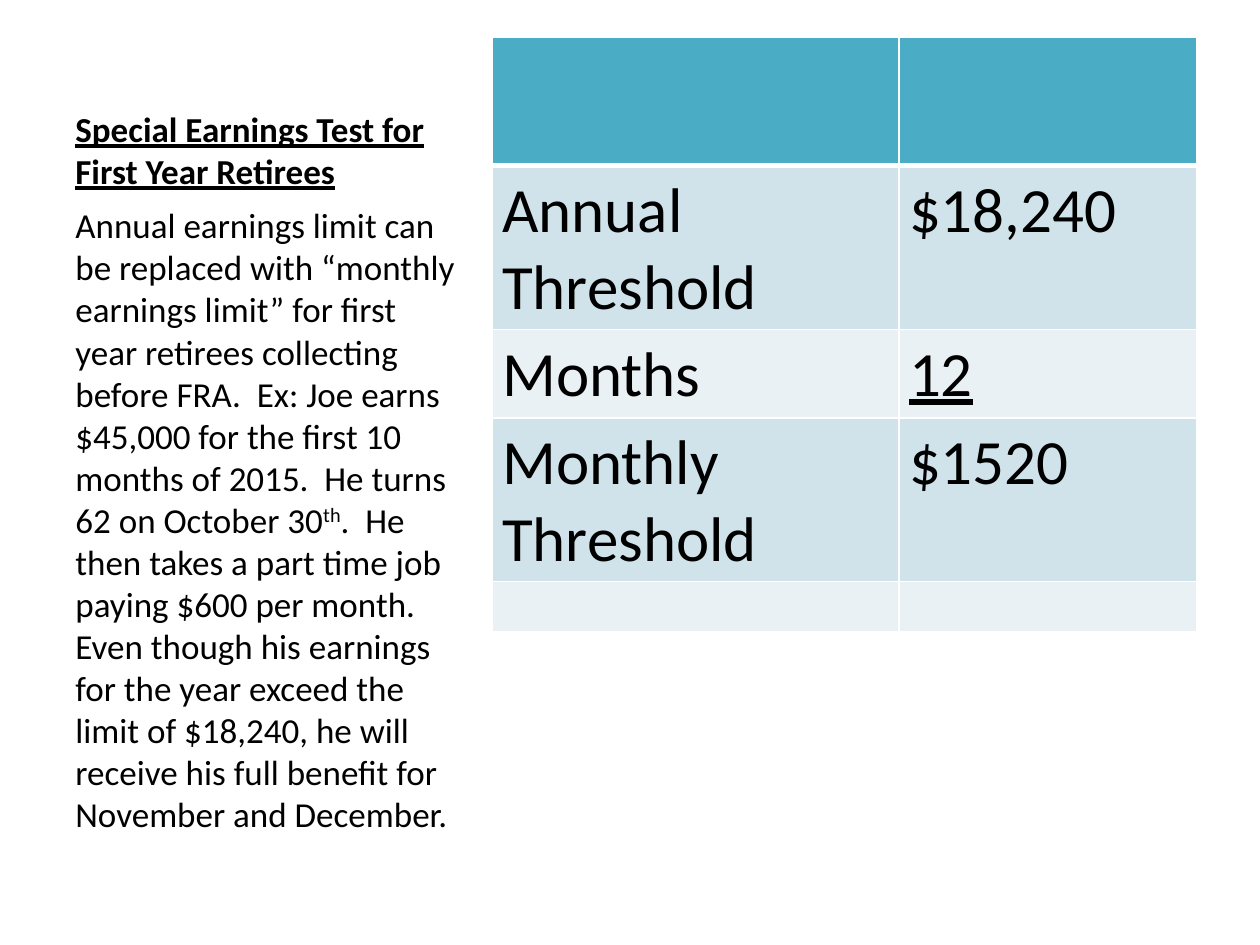
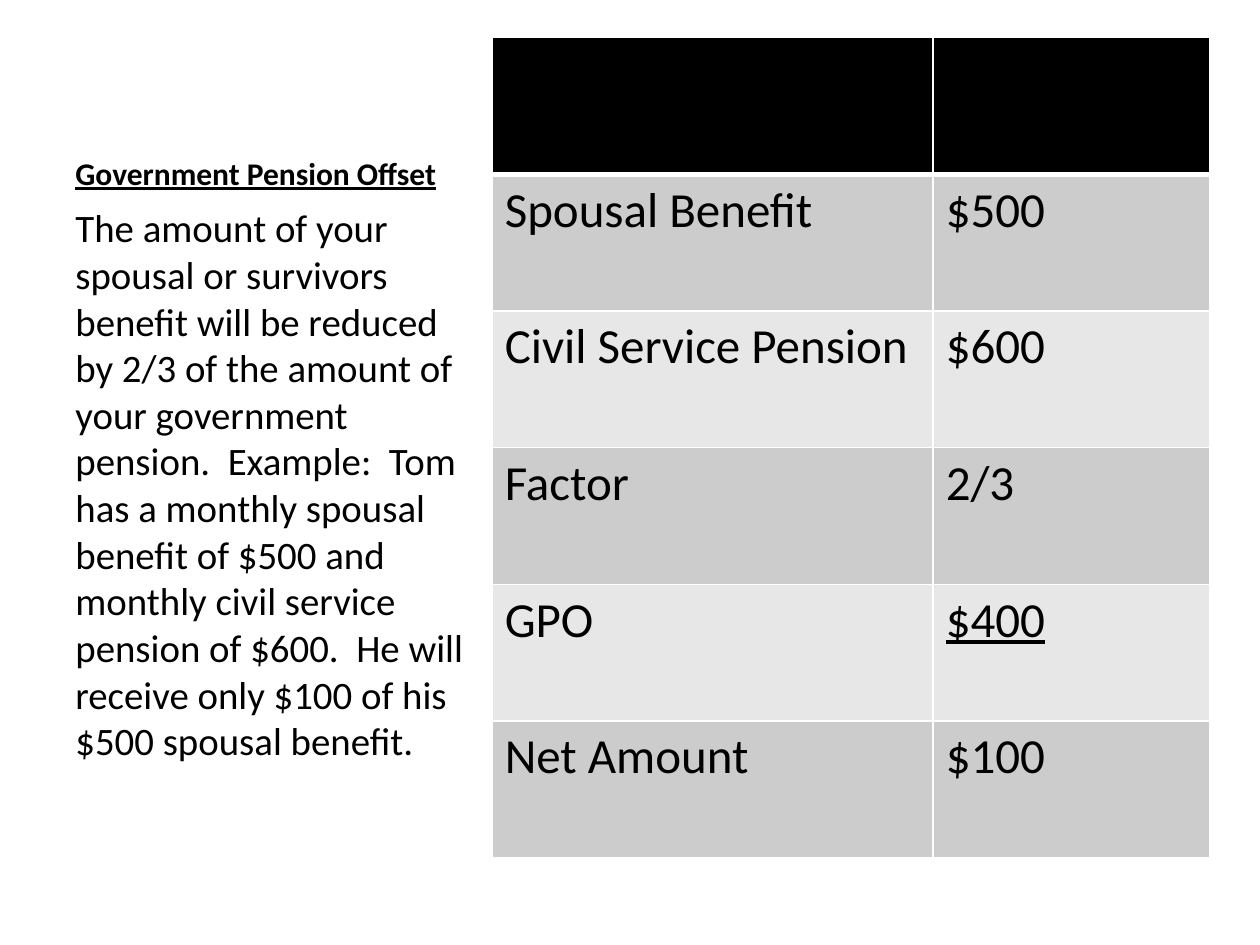
from pptx import Presentation
from pptx.dml.color import RGBColor
from pptx.enum.text import MSO_ANCHOR
from pptx.oxml import parse_xml
from pptx.oxml.ns import nsdecls
from pptx.util import Pt

FONT = "Calibri"
BLACK = "000000"
WHITE = "FFFFFF"
TEAL_BANDS = ("4BACC6", "D0E3EA", "E9F1F5")
GREY_BANDS = (BLACK, "CCCCCC", "E7E7E7")
COLUMN_LEFT, COLUMN_WIDTH = 36, 237
TITLE_TOP, TITLE_HEIGHT = 21.5, 91.5
BODY_TOP, BODY_HEIGHT = 113, 369.5
TABLE_LEFT = 281.25


def color(value):
    return RGBColor.from_string(value)


class Deck:
    def __init__(self):
        self.presentation = Presentation()
        self.presentation.slide_width = Pt(720)
        self.presentation.slide_height = Pt(540)
        self.slide = None

    def new_slide(self):
        self.slide = self.presentation.slides.add_slide(self.presentation.slide_layouts[6])

    def add_run(self, paragraph, text, size, bold=False, underline=False, baseline=0):
        run = paragraph.add_run()
        run.text = text
        run.font.name = FONT
        run.font.size = Pt(size)
        run.font.bold = bold
        run.font.underline = underline
        run.font.color.rgb = color(BLACK)
        if baseline:
            run._r.get_or_add_rPr().set("baseline", str(baseline * 1000))

    def add_text(self, top, height, anchor):
        shape = self.slide.shapes.add_textbox(
            Pt(COLUMN_LEFT), Pt(top), Pt(COLUMN_WIDTH), Pt(height))
        shape.text_frame.word_wrap = True
        shape.text_frame.vertical_anchor = anchor
        return shape.text_frame.paragraphs[0]

    def add_title(self, text, size):
        paragraph = self.add_text(TITLE_TOP, TITLE_HEIGHT, MSO_ANCHOR.BOTTOM)
        self.add_run(paragraph, text, size, bold=True, underline=True)

    def add_body(self, runs, size):
        paragraph = self.add_text(BODY_TOP, BODY_HEIGHT, MSO_ANCHOR.TOP)
        paragraph.space_before = Pt(size * 0.2)
        for text, baseline in runs:
            self.add_run(paragraph, text, size, baseline=baseline)

    def style_cell(self, cell, row_index, bands):
        properties = cell._tc.get_or_add_tcPr()
        widths = {"L": 1, "R": 1, "T": 3 if row_index == 1 else 1, "B": 3 if row_index == 0 else 1}
        for side, width in widths.items():
            properties.append(parse_xml(
                f'<a:ln{side} {nsdecls("a")} w="{Pt(width)}"><a:solidFill>'
                f'<a:srgbClr val="{WHITE}"/></a:solidFill></a:ln{side}>'))
        cell.fill.solid()
        band = 0 if row_index == 0 else 2 - row_index % 2
        cell.fill.fore_color.rgb = color(bands[band])

    def add_table(self, rows, widths, heights, size, bands, underlined, margin=7.2):
        table = self.slide.shapes.add_table(
            len(rows), len(widths), Pt(TABLE_LEFT), Pt(TITLE_TOP),
            Pt(sum(widths)), Pt(sum(heights))).table
        table.first_row = False
        table.horz_banding = False
        for column, width in zip(table.columns, widths):
            column.width = Pt(width)
        for row_index, (values, height) in enumerate(zip(rows, heights)):
            table.rows[row_index].height = Pt(height)
            for column_index, text in enumerate(values):
                cell = table.cell(row_index, column_index)
                cell.margin_left = cell.margin_right = Pt(margin)
                self.style_cell(cell, row_index, bands)
                if text:
                    self.add_run(cell.text_frame.paragraphs[0], text, size,
                                 underline=text == underlined)


def add_earnings_test(deck):
    deck.new_slide()
    deck.add_title("Special Earnings Test for First Year Retirees", 20)
    deck.add_table(
        [("", ""), ("Annual Threshold", "$18,240"), ("Months", "12"),
         ("Monthly Threshold", "$1520"), ("", "")],
        widths=(232.5, 170), heights=(73.25, 92.25, 49.75, 49.75, 28.75),
        size=36, bands=TEAL_BANDS, underlined="12", margin=5.75)
    deck.add_body([
        ("Annual earnings limit can be replaced with “monthly earnings limit” for first year "
         "retirees collecting before FRA.  Ex: Joe earns $45,000 for the first 10 months of "
         "2015.  He turns 62 on October 30", 0),
        ("th", 30),
        (".  He then takes a part time job paying $600 per month.  Even though his earnings "
         "for the year exceed the limit of $18,240, he will receive his full benefit for "
         "November and December.", 0)], 20)


def add_pension_offset(deck):
    deck.new_slide()
    deck.add_title("Government Pension Offset", 18)
    rows = [("", ""), ("Spousal Benefit", "$500"), ("Civil Service Pension", "$600"),
            ("Factor", "2/3"), ("GPO", "$400"), ("Net Amount", "$100")]
    deck.add_table(rows, widths=(252, 158.25), heights=[78.1] * len(rows),
                   size=28, bands=GREY_BANDS, underlined="$400")
    deck.add_body([
        ("The amount of your spousal or survivors benefit will be reduced by 2/3 of the amount "
         "of your government pension.  Example:  Tom has a monthly spousal benefit of $500 and "
         "monthly civil service pension of $600.  He will receive only $100 of his $500 "
         "spousal benefit.", 0)], 22.2)


def main():
    deck = Deck()
    add_earnings_test(deck)
    add_pension_offset(deck)
    deck.presentation.save("out.pptx")


if __name__ == "__main__":
    main()
